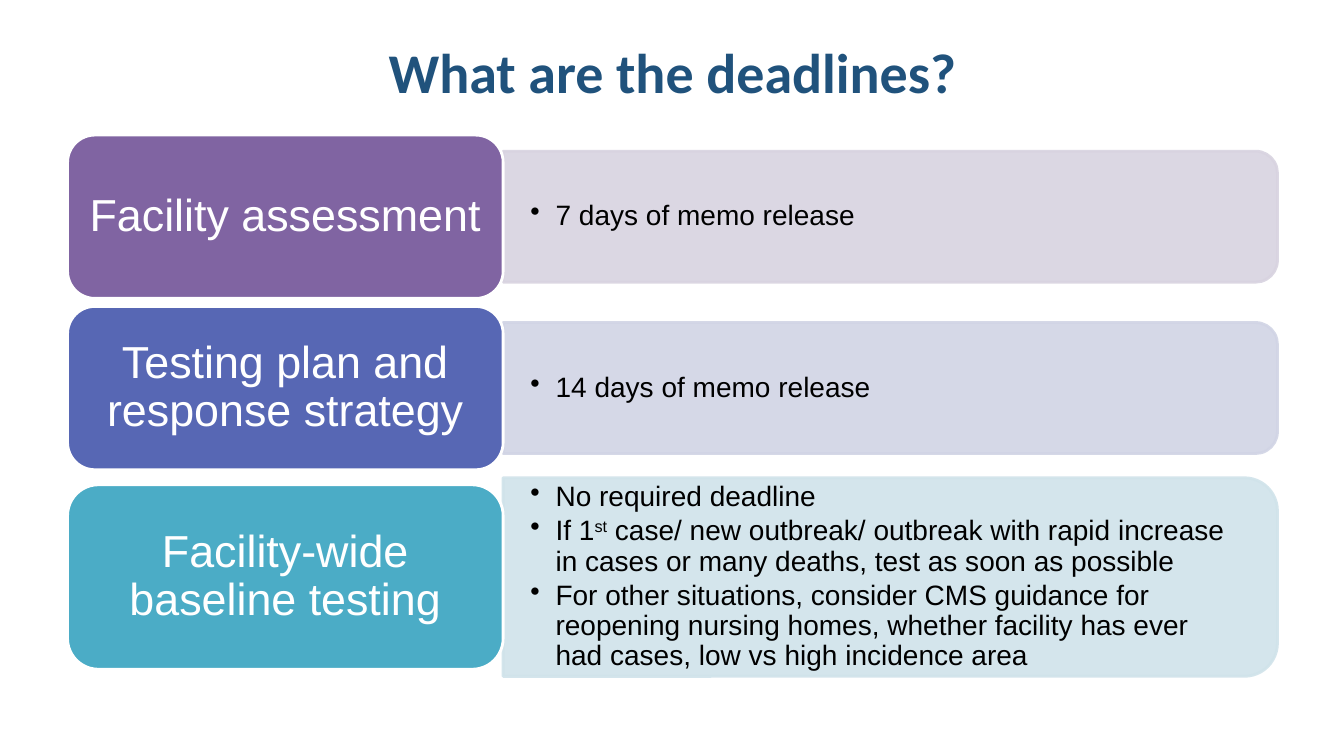
from lxml import etree
from pptx import Presentation
from pptx.dml.color import RGBColor
from pptx.enum.shapes import MSO_SHAPE
from pptx.enum.text import MSO_ANCHOR, PP_ALIGN
from pptx.oxml.ns import qn
from pptx.util import Inches, Pt

ROUND, ROUND_TOP = MSO_SHAPE.ROUNDED_RECTANGLE, MSO_SHAPE.ROUND_2_SAME_RECTANGLE
CENTER, LEFT, MIDDLE = PP_ALIGN.CENTER, PP_ALIGN.LEFT, MSO_ANCHOR.MIDDLE

# Content: label, label colour, panel colour, label height, panel height, points.
# A point is a list of (text, is superscript) runs.
TITLE = "What are the deadlines?"
DEADLINES = [
    ("Facility assessment", "purple", "pale purple", 1.62, 1.3,
     [[("7 days of memo release", False)]]),
    ("Testing plan and response strategy", "indigo", "pale indigo", 1.62, 1.3,
     [[("14 days of memo release", False)]]),
    ("Facility-wide baseline testing", "teal", "pale teal", 1.83, 1.97,
     [[("No required deadline", False)],
      [("If 1", False), ("st", True),
       (" case/ new outbreak/ outbreak with rapid increase in cases or many "
        "deaths, test as soon as possible", False)],
      [("For other situations, consider CMS guidance for reopening nursing homes, "
        "whether facility has ever had cases, low vs high incidence area", False)]]),
]
COLORS = {
    "title": "20527C", "white": "FFFFFF", "black": "000000",
    "purple": "8064A2", "pale purple": "D8D3E0",
    "indigo": "5767B4", "pale indigo": "D1D4E5",
    "teal": "4BACC6", "pale teal": "D0E3EA",
}

# Layout in inches
SLIDE_W, SLIDE_H = 13.33, 7.5
MARGIN = 0.67
CONTENT_W = 12
LABEL_W = CONTENT_W * 0.36
PANEL_W = CONTENT_W - LABEL_W
FIRST_ROW, ROW_GAP = 1.34, 0.08
CORNER_INSET = 0.049  # share of the panel height lost to its round corners

prs = Presentation()
prs.slide_width, prs.slide_height = Inches(SLIDE_W), Inches(SLIDE_H)
slide = prs.slides.add_slide(prs.slide_layouts[6])


def color(name):
    return RGBColor.from_string(COLORS[name])


def add_block(preset, x, y, w, h, fill, line, opacity=100):
    block = slide.shapes.add_shape(preset, *map(Inches, (x, y, w, h)))
    block.shadow.inherit = False
    block.fill.solid()
    block.fill.fore_color.rgb = color(fill)
    block.line.color.rgb = color(line)
    block.line.width = Pt(2)
    if opacity < 100:
        for paint in block._element.spPr.iter(qn("a:srgbClr")):
            etree.SubElement(paint, qn("a:alpha"), val=str(opacity * 1000))
    return block


def add_box(x, y, w, h):
    return slide.shapes.add_textbox(*map(Inches, (x, y, w, h)))


def set_frame(shape, inset_x, inset_y):
    frame = shape.text_frame
    frame.word_wrap = True
    frame.vertical_anchor = MIDDLE
    frame.margin_left = frame.margin_right = Inches(inset_x)
    frame.margin_top = frame.margin_bottom = Inches(inset_y)
    return frame


def style(paragraph, align, font_name, size, font_color, bold=False):
    paragraph.alignment = align
    for run in paragraph.runs:
        font = run.font
        font.name, font.size, font.bold = font_name, Pt(size), bold
        font.color.rgb = color(font_color)


def add_points(frame, points):
    for index, point in enumerate(points):
        paragraph = frame.paragraphs[0] if index == 0 else frame.add_paragraph()
        paragraph.line_spacing = 0.9
        paragraph.space_after = Pt(3)
        props = paragraph._p.get_or_add_pPr()
        props.set("marL", str(Inches(0.25)))
        props.set("indent", str(Inches(-0.25)))
        etree.SubElement(props, qn("a:buChar"), char="•")
        for text, is_super in point:
            run = paragraph.add_run()
            run.text = text
            if is_super:
                run.font._element.set("baseline", "30000")
        style(paragraph, LEFT, "Arial", 20, "black")


# Title
title = set_frame(add_box(MARGIN, 0.08, CONTENT_W, 1.25), 0.05, 0.05)
title.text = TITLE
style(title.paragraphs[0], CENTER, "Calibri", 40, "title", bold=True)

# One row per deadline: panel, its points, then the label on top
panel_x = MARGIN + LABEL_W
row_y = FIRST_ROW
for name, label_fill, panel_fill, label_h, panel_h, points in DEADLINES:
    row_h = max(label_h, panel_h)
    middle = row_y + row_h / 2

    # The panel is a quarter-turned shape, so its width and height swap
    panel = add_block(ROUND_TOP, panel_x + (PANEL_W - panel_h) / 2,
                      middle - PANEL_W / 2, panel_h, PANEL_W,
                      panel_fill, panel_fill, opacity=90)
    panel.rotation = 90

    inset = panel_h * CORNER_INSET
    details = add_box(panel_x, middle - panel_h / 2 + inset,
                      PANEL_W - inset, panel_h - 2 * inset)
    add_points(set_frame(details, 0.27, 0.14), points)

    label = add_block(ROUND, MARGIN, middle - label_h / 2, LABEL_W, label_h,
                      label_fill, "white")
    label_text = set_frame(label, 0.13, 0.07)
    label_text.text = name
    label_text.paragraphs[0].line_spacing = 0.9
    style(label_text.paragraphs[0], CENTER, "Arial", 32, "white")

    row_y += row_h + ROW_GAP

prs.save("out.pptx")
